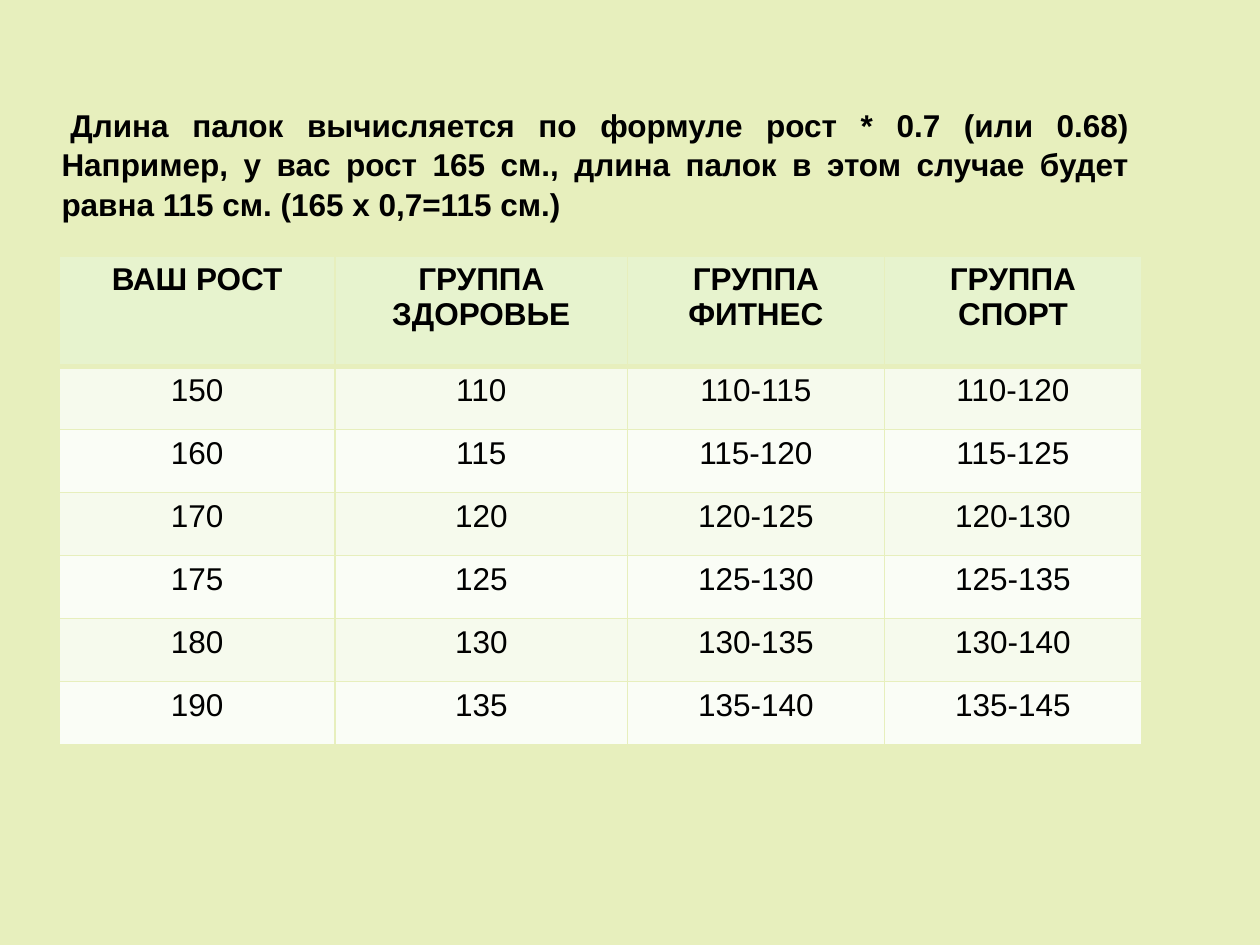
from lxml import etree
from pptx import Presentation
from pptx.dml.color import RGBColor
from pptx.enum.text import PP_ALIGN
from pptx.oxml.ns import qn
from pptx.util import Inches, Pt

CENTER, JUSTIFY = PP_ALIGN.CENTER, PP_ALIGN.JUSTIFY
BLANK_LAYOUT = 6

BACKGROUND = "E7EFBD"
HEADER_FILL = "E7F3CE"
BAND_FILLS = ("F6FAED", "FAFDF6")
INK = "000000"

FORMULA = (
    "Длина палок вычисляется по формуле рост * 0.7 (или 0.68)\n"
    "Например, у вас рост 165 см., длина палок в этом случае будет "
    "равна 115 см. (165 х 0,7=115 см.)"
)
POLE_LENGTHS = [
    ("ВАШ РОСТ", "ГРУППА ЗДОРОВЬЕ", "ГРУППА ФИТНЕС", "ГРУППА СПОРТ"),
    ("150", "110", "110-115", "110-120"),
    ("160", "115", "115-120", "115-125"),
    ("170", "120", "120-125", "120-130"),
    ("175", "125", "125-130", "125-135"),
    ("180", "130", "130-135", "130-140"),
    ("190", "135", "135-140", "135-145"),
]
COLUMN_WIDTHS = (2.19, 2.32, 2.04, 2.04)
HEADER_HEIGHT, ROW_HEIGHT = 0.88, 0.5


def color(hex_code):
    return RGBColor.from_string(hex_code)


def add_border(cell, side, points):
    line = etree.SubElement(
        cell._tc.get_or_add_tcPr(), qn(f"a:ln{side}"), w=str(Pt(points))
    )
    fill = etree.SubElement(line, qn("a:solidFill"))
    etree.SubElement(fill, qn("a:srgbClr"), val=BACKGROUND)


class SlideBuilder:
    font_name = "Arial"
    font_size = 18

    def __init__(self, slide):
        self.slide = slide
        slide.background.fill.solid()
        slide.background.fill.fore_color.rgb = color(BACKGROUND)

    def set_words(self, paragraph, words, align, bold):
        paragraph.text = words
        paragraph.alignment = align
        for run in paragraph.runs:
            run.font.name = self.font_name
            run.font.size = Pt(self.font_size)
            run.font.bold = bold
            run.font.color.rgb = color(INK)

    def add_text(self, words, left, top, width, height):
        box = self.slide.shapes.add_textbox(
            Inches(left), Inches(top), Inches(width), Inches(height)
        )
        box.text_frame.word_wrap = True
        paragraph = box.text_frame.paragraphs[0]
        self.set_words(paragraph, words, JUSTIFY, bold=True)
        paragraph.line_spacing = 1.04
        paragraph._p.get_or_add_pPr().set("indent", str(Inches(0.07)))

    def add_table(self, rows, left, top):
        heights = [HEADER_HEIGHT] + [ROW_HEIGHT] * (len(rows) - 1)
        table = self.slide.shapes.add_table(
            len(rows), len(COLUMN_WIDTHS), Inches(left), Inches(top),
            Inches(sum(COLUMN_WIDTHS)), Inches(sum(heights)),
        ).table
        for column, width in zip(table.columns, COLUMN_WIDTHS):
            column.width = Inches(width)
        for index, (row, height, values) in enumerate(zip(table.rows, heights, rows)):
            row.height = Inches(height)
            for cell, value in zip(row.cells, values):
                self.fill_cell(cell, value, index)

    def fill_cell(self, cell, value, row_index):
        is_header = row_index == 0
        top = 3 if row_index == 1 else 1
        bottom = 3 if is_header else 1
        for side, points in (("L", 1), ("R", 1), ("T", top), ("B", bottom)):
            add_border(cell, side, points)
        cell.fill.solid()
        cell.fill.fore_color.rgb = color(
            HEADER_FILL if is_header else BAND_FILLS[(row_index - 1) % 2]
        )
        self.set_words(cell.text_frame.paragraphs[0], value, CENTER, bold=is_header)


def main():
    deck = Presentation()
    deck.slide_width, deck.slide_height = Inches(10), Inches(7.5)
    builder = SlideBuilder(deck.slides.add_slide(deck.slide_layouts[BLANK_LAYOUT]))
    builder.add_text(FORMULA, 0.39, 0.78, 8.67, 4.95)
    builder.add_table(POLE_LENGTHS, 0.47, 2.03)
    deck.save("out.pptx")


if __name__ == "__main__":
    main()
